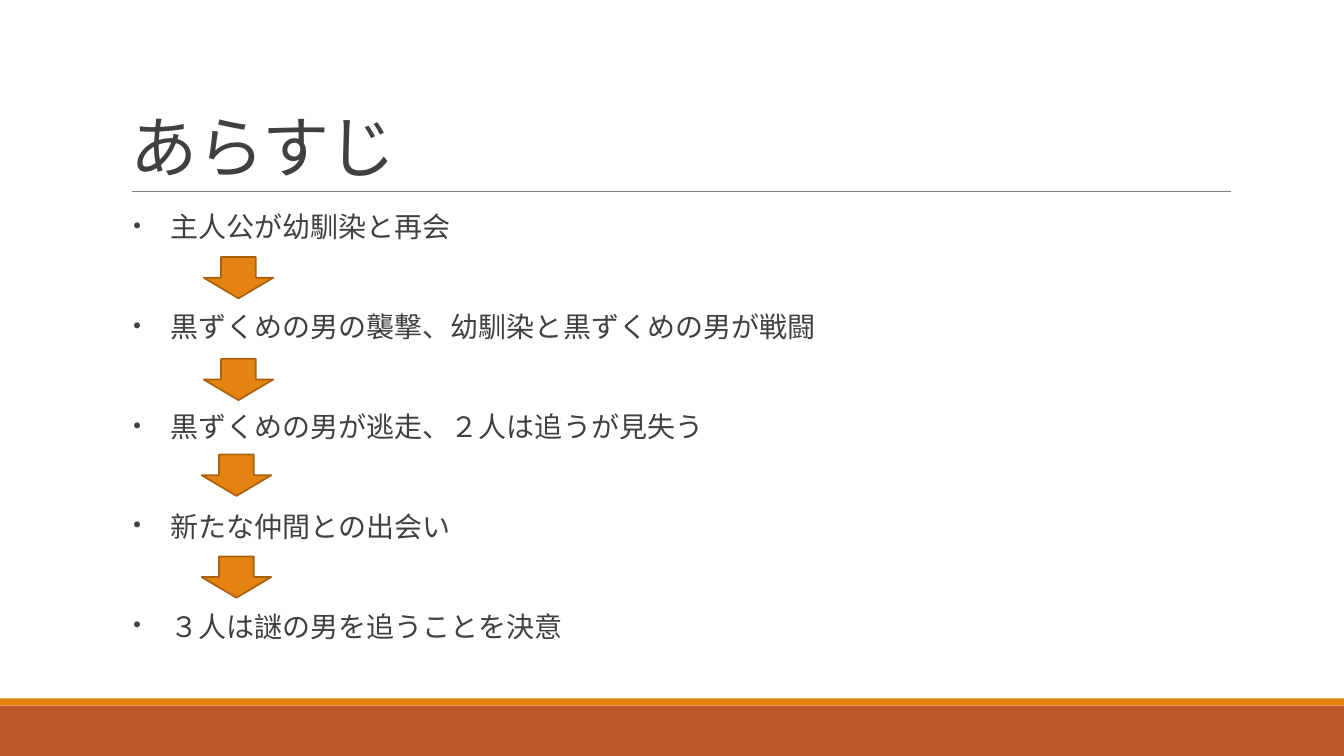
from lxml.etree import SubElement
from pptx import Presentation
from pptx.dml.color import RGBColor
from pptx.enum.shapes import MSO_CONNECTOR, MSO_SHAPE
from pptx.enum.text import MSO_ANCHOR
from pptx.oxml.ns import qn
from pptx.util import Inches, Pt

FONT = "Calibri"
TEXT, ORANGE, RUST = "404040", "E48312", "BD582C"
ARROW_EDGE, RULE = "A9610D", "808080"

STORY = [
    "主人公が幼馴染と再会",
    "黒ずくめの男の襲撃、幼馴染と黒ずくめの男が戦闘",
    "黒ずくめの男が逃走、２人は追うが見失う",
    "新たな仲間との出会い",
    "３人は謎の男を追うことを決意",
]
ARROW_POSITIONS = [(2.02, 2.55), (2.02, 3.56), (2, 4.51), (2, 5.52)]
LINE_HEIGHT, STORY_PITCH = 22, 71.4  # points


def color(value):
    return RGBColor.from_string(value)


def add_filled_shape(slide, kind, left, top, width, height, fill, edge=None):
    shape = slide.shapes.add_shape(
        kind, Inches(left), Inches(top), Inches(width), Inches(height))
    shape.shadow.inherit = False
    shape.fill.solid()
    shape.fill.fore_color.rgb = color(fill)
    if edge:
        shape.line.color.rgb = color(edge)
        shape.line.width = Pt(1.25)
    else:
        shape.line.fill.background()


def add_rule(slide, left, right, top):
    line = slide.shapes.add_connector(
        MSO_CONNECTOR.STRAIGHT, Inches(left), Inches(top), Inches(right), Inches(top))
    line.line.color.rgb = color(RULE)
    line.line.width = Pt(0.5)
    SubElement(line._element.spPr, qn("a:effectLst"))


def add_text_frame(slide, left, top, width, height):
    box = slide.shapes.add_textbox(
        Inches(left), Inches(top), Inches(width), Inches(height))
    box.text_frame.word_wrap = True
    return box.text_frame


def style_paragraph(paragraph, size):
    paragraph.font.name = FONT
    paragraph.font.size = Pt(size)
    paragraph.font.color.rgb = color(TEXT)


def add_title(slide, text):
    frame = add_text_frame(slide, 1.2, 0.31, 11, 1.59)
    frame.vertical_anchor = MSO_ANCHOR.BOTTOM
    paragraph = frame.paragraphs[0]
    run = paragraph.add_run()
    run.text = text
    run.font._element.set("spc", "-50")
    paragraph.line_spacing = 0.85
    style_paragraph(paragraph, 48)


def set_bullet(paragraph, character, indent):
    properties = paragraph._p.get_or_add_pPr()
    properties.set("marL", str(Inches(indent)))
    properties.set("indent", str(-Inches(indent)))
    SubElement(properties, qn("a:buFont"), typeface=FONT)
    SubElement(properties, qn("a:buChar"), char=character)


def add_story(slide, steps):
    frame = add_text_frame(slide, 1.23, 2.06, 11, 4.4)
    frame.margin_left = frame.margin_right = 0
    for index, step in enumerate(steps):
        paragraph = frame.add_paragraph() if index else frame.paragraphs[0]
        paragraph.text = step
        paragraph.line_spacing = Pt(LINE_HEIGHT)
        paragraph.space_after = Pt(STORY_PITCH - LINE_HEIGHT)
        set_bullet(paragraph, "・", 0.46)
        style_paragraph(paragraph, 20)


def main():
    presentation = Presentation()
    presentation.slide_width = Inches(13.33)
    presentation.slide_height = Inches(7.5)
    slide = presentation.slides.add_slide(presentation.slide_layouts[6])

    # Footer bands and title rule
    add_filled_shape(slide, MSO_SHAPE.RECTANGLE, 0, 7, 13.33, 0.5, RUST)
    add_filled_shape(slide, MSO_SHAPE.RECTANGLE, 0, 6.93, 13.33, 0.07, ORANGE)
    add_rule(slide, 1.31, 12.21, 1.9)

    # Title and story steps
    add_title(slide, "あらすじ")
    add_story(slide, STORY)

    # Arrows between the steps
    for left, top in ARROW_POSITIONS:
        add_filled_shape(slide, MSO_SHAPE.DOWN_ARROW, left, top, 0.69, 0.41,
                         ORANGE, ARROW_EDGE)

    presentation.save("out.pptx")


if __name__ == "__main__":
    main()
